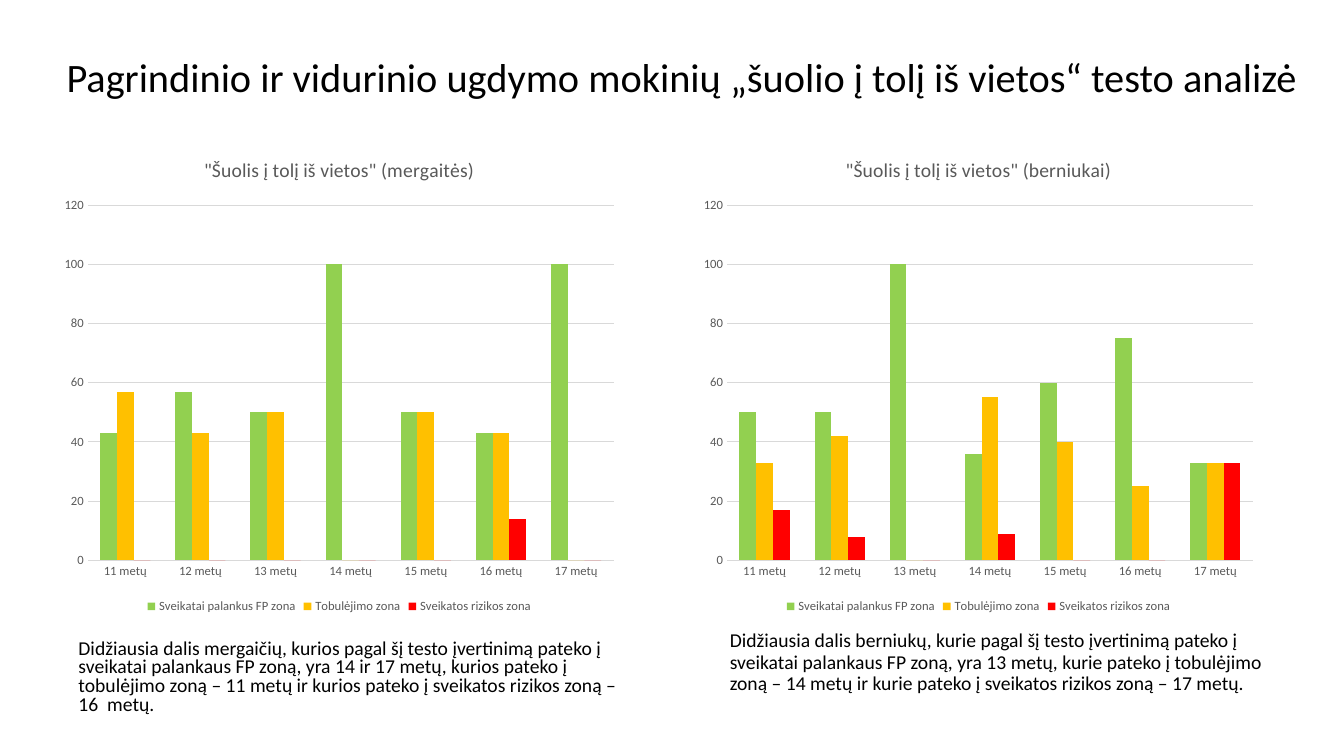
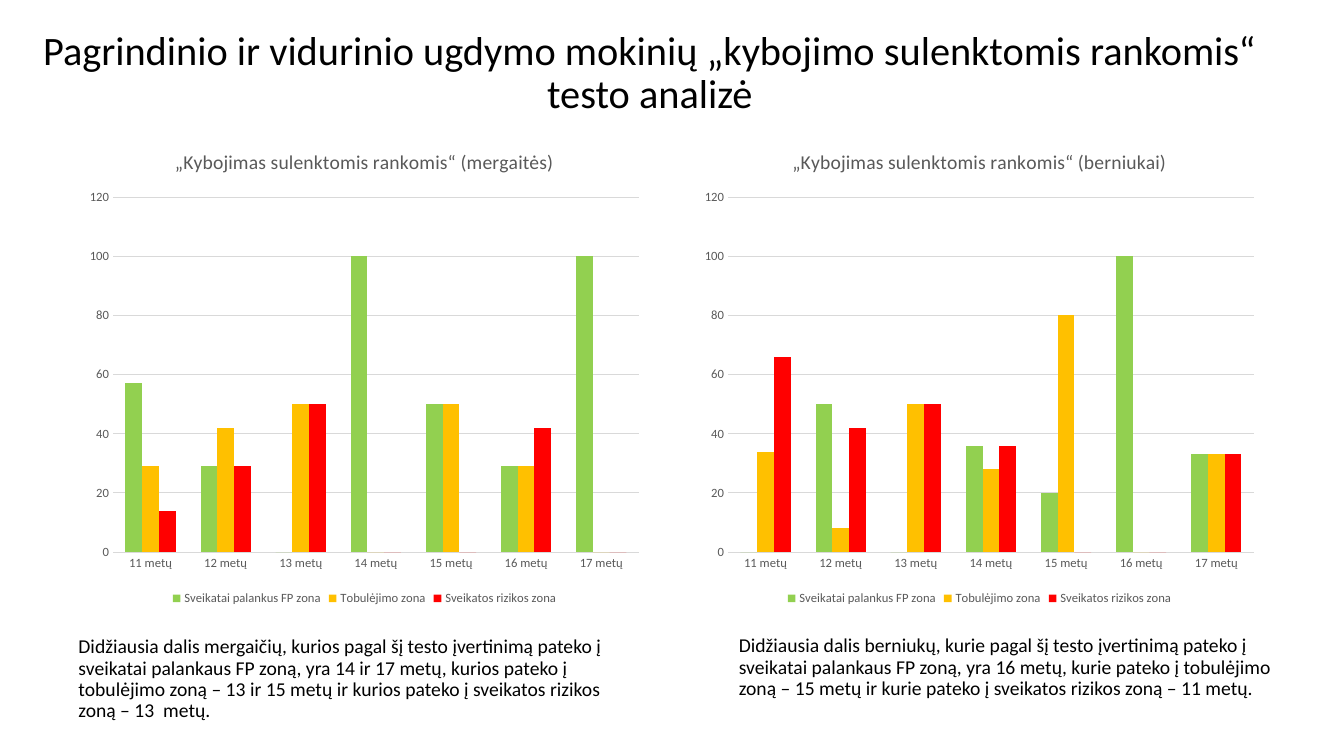
import pptx
import pptx.chart.data
import pptx.dml.color
import pptx.enum.chart
import pptx.enum.text
import pptx.util
from dataclasses import dataclass
from lxml import etree


@dataclass(frozen=True)
class Theme:
    font: str = "Calibri"
    text: str = "000000"
    muted: str = "595959"
    grid: str = "D9D9D9"
    title: float = 28.8
    body: float = 14
    chart_title: float = 14
    chart: float = 10
    label: float = 9


THEME = Theme()
SLIDE_SIZE = (13.33, 7.5)
CHART_SIZE = (5.67, 4.76)
PLOT_SHARES = {"x": 0.06, "y": 0.14, "w": 0.92, "h": 0.74}
AGES = [f"{age} metų" for age in range(11, 18)]
ZONES = [
    ("Sveikatai palankus FP zona", "92D050"),
    ("Tobulėjimo zona", "FFC000"),
    ("Sveikatos rizikos zona", "FF0000"),
]

# Boxes are left, top, width, height in inches; values follow ZONES.
SLIDES = [
    {
        "title": "Pagrindinio ir vidurinio ugdymo mokinių „šuolio į tolį iš vietos“ testo analizė",
        "title_box": (0.2, 0.4, 13.13, 0.78),
        "chart_top": 1.37,
        "groups": [
            {
                "name": "\"Šuolis į tolį iš vietos\" (mergaitės)",
                "chart_left": 0.53,
                "values": [
                    (43, 57, 50, 100, 50, 43, 100),
                    (57, 43, 50, 0, 50, 43, 0),
                    (0, 0, 0, 0, 0, 14, 0),
                ],
                "summary": "Didžiausia dalis mergaičių, kurios pagal šį testo įvertinimą pateko į "
                           "sveikatai palankaus FP zoną, yra 14 ir 17 metų, kurios pateko į "
                           "tobulėjimo zoną – 11 metų ir kurios pateko į sveikatos rizikos zoną – "
                           "16  metų.",
                "summary_box": (0.68, 6.3, 5.67, 0.91),
                "spacing": 0.8,
            },
            {
                "name": "\"Šuolis į tolį iš vietos\" (berniukai)",
                "chart_left": 6.87,
                "values": [
                    (50, 50, 100, 36, 60, 75, 33),
                    (33, 42, 0, 55, 40, 25, 33),
                    (17, 8, 0, 9, 0, 0, 33),
                ],
                "summary": "Didžiausia dalis berniukų, kurie pagal šį testo įvertinimą pateko į "
                           "sveikatai palankaus FP zoną, yra 13 metų, kurie pateko į tobulėjimo "
                           "zoną – 14 metų ir kurie pateko į sveikatos rizikos zoną – 17 metų.",
                "summary_box": (7.14, 6.21, 5.67, 0.78),
                "spacing": 0.9,
            },
        ],
    },
    {
        "title": "Pagrindinio ir vidurinio ugdymo mokinių „kybojimo sulenktomis rankomis“ testo analizė",
        "title_box": (0.2, 0.4, 12.49, 0.67),
        "chart_top": 1.29,
        "groups": [
            {
                "name": "„Kybojimas sulenktomis rankomis“ (mergaitės)",
                "chart_left": 0.78,
                "values": [
                    (57, 29, 0, 100, 50, 29, 100),
                    (29, 42, 50, 0, 50, 29, 0),
                    (14, 29, 50, 0, 0, 42, 0),
                ],
                "summary": "Didžiausia dalis mergaičių, kurios pagal šį testo įvertinimą pateko į "
                           "sveikatai palankaus FP zoną, yra 14 ir 17 metų, kurios pateko į "
                           "tobulėjimo zoną – 13 ir 15 metų ir kurios pateko į sveikatos rizikos "
                           "zoną – 13  metų.",
                "summary_box": (0.68, 6.27, 5.67, 0.96),
                "spacing": 0.9,
            },
            {
                "name": "„Kybojimas sulenktomis rankomis“ (berniukai)",
                "chart_left": 6.88,
                "values": [
                    (0, 50, 0, 36, 20, 100, 33),
                    (34, 8, 50, 28, 80, 0, 33),
                    (66, 42, 50, 36, 0, 0, 33),
                ],
                "summary": "Didžiausia dalis berniukų, kurie pagal šį testo įvertinimą pateko į "
                           "sveikatai palankaus FP zoną, yra 16 metų, kurie pateko į tobulėjimo "
                           "zoną – 15 metų ir kurie pateko į sveikatos rizikos zoną – 11 metų.",
                "summary_box": (7.23, 6.26, 5.67, 0.84),
                "spacing": 0.9,
            },
        ],
    },
]


def inches(lengths):
    return [pptx.util.Inches(length) for length in lengths]


def rgb(color):
    return pptx.dml.color.RGBColor.from_string(color)


def set_all(target, **values):
    for name, value in values.items():
        setattr(target, name, value)


def style_font(font, size, color):
    set_all(font, name=THEME.font, size=pptx.util.Pt(size), bold=False)
    font.color.rgb = rgb(color)


def add_text(s, text, box, size, spacing=0.9, **formats):
    """Add a wrapped one-paragraph box; formats may hold anchor and alignment."""
    tf = s.shapes.add_textbox(*inches(box)).text_frame
    set_all(tf, word_wrap=True,
            vertical_anchor=formats.get("anchor", pptx.enum.text.MSO_ANCHOR.TOP))
    p = tf.paragraphs[0]
    set_all(p, line_spacing=spacing,
            alignment=formats.get("alignment", pptx.enum.text.PP_ALIGN.LEFT))
    r = p.add_run()
    r.text = text
    style_font(r.font, size, THEME.text)


def fix_plot_area(chart):
    """Place the inner plot area by shares of the chart's size."""
    plot_area = chart.plots[0]._element.getparent()
    ns = plot_area.nsmap["c"]
    for old in plot_area.findall(f"{{{ns}}}layout"):
        plot_area.remove(old)
    layout = etree.Element(f"{{{ns}}}layout")
    manual = etree.SubElement(layout, f"{{{ns}}}manualLayout")
    settings = {"layoutTarget": "inner", "xMode": "edge", "yMode": "edge", **PLOT_SHARES}
    for tag, value in settings.items():
        etree.SubElement(manual, f"{{{ns}}}{tag}").set("val", str(value))
    plot_area.insert(0, layout)


def add_zone_chart(s, group, top):
    data = pptx.chart.data.CategoryChartData()
    data.categories = AGES
    for (zone, _), values in zip(ZONES, group["values"]):
        data.add_series(zone, values)
    box = (group["chart_left"], top, *CHART_SIZE)
    chart = s.shapes.add_chart(pptx.enum.chart.XL_CHART_TYPE.COLUMN_CLUSTERED,
                               *inches(box), data).chart
    style_font(chart.font, THEME.chart, THEME.text)

    chart.has_title = True
    p = chart.chart_title.text_frame.paragraphs[0]
    r = p.add_run()
    r.text = group["name"]
    style_font(r.font, THEME.chart_title, THEME.muted)
    chart.chart_title.include_in_layout = False

    chart.has_legend = True
    set_all(chart.legend, include_in_layout=False,
            position=pptx.enum.chart.XL_LEGEND_POSITION.BOTTOM)
    style_font(chart.legend.font, THEME.label, THEME.muted)

    no_tick = pptx.enum.chart.XL_TICK_MARK.NONE
    for axis in (chart.category_axis, chart.value_axis):
        set_all(axis, major_tick_mark=no_tick, minor_tick_mark=no_tick)
        axis.format.line.fill.background()
        style_font(axis.tick_labels.font, THEME.label, THEME.muted)
    set_all(chart.value_axis, minimum_scale=0, maximum_scale=120, major_unit=20,
            has_major_gridlines=True)
    line = chart.value_axis.major_gridlines.format.line
    line.width = pptx.util.Pt(0.75)
    line.color.rgb = rgb(THEME.grid)

    plot = chart.plots[0]
    set_all(plot, gap_width=150, overlap=0, vary_by_categories=False)
    for series, (_, color) in zip(plot.series, ZONES):
        series.format.fill.solid()
        series.format.fill.fore_color.rgb = rgb(color)
    fix_plot_area(chart)


def main():
    prs = pptx.Presentation()
    prs.slide_width, prs.slide_height = inches(SLIDE_SIZE)
    for content in SLIDES:
        s = prs.slides.add_slide(prs.slide_layouts[6])
        add_text(s, content["title"], content["title_box"], THEME.title,
                 anchor=pptx.enum.text.MSO_ANCHOR.MIDDLE,
                 alignment=pptx.enum.text.PP_ALIGN.CENTER)
        for group in content["groups"]:
            add_zone_chart(s, group, content["chart_top"])
            add_text(s, group["summary"], group["summary_box"], THEME.body, group["spacing"])
    prs.save("out.pptx")


if __name__ == "__main__":
    main()
